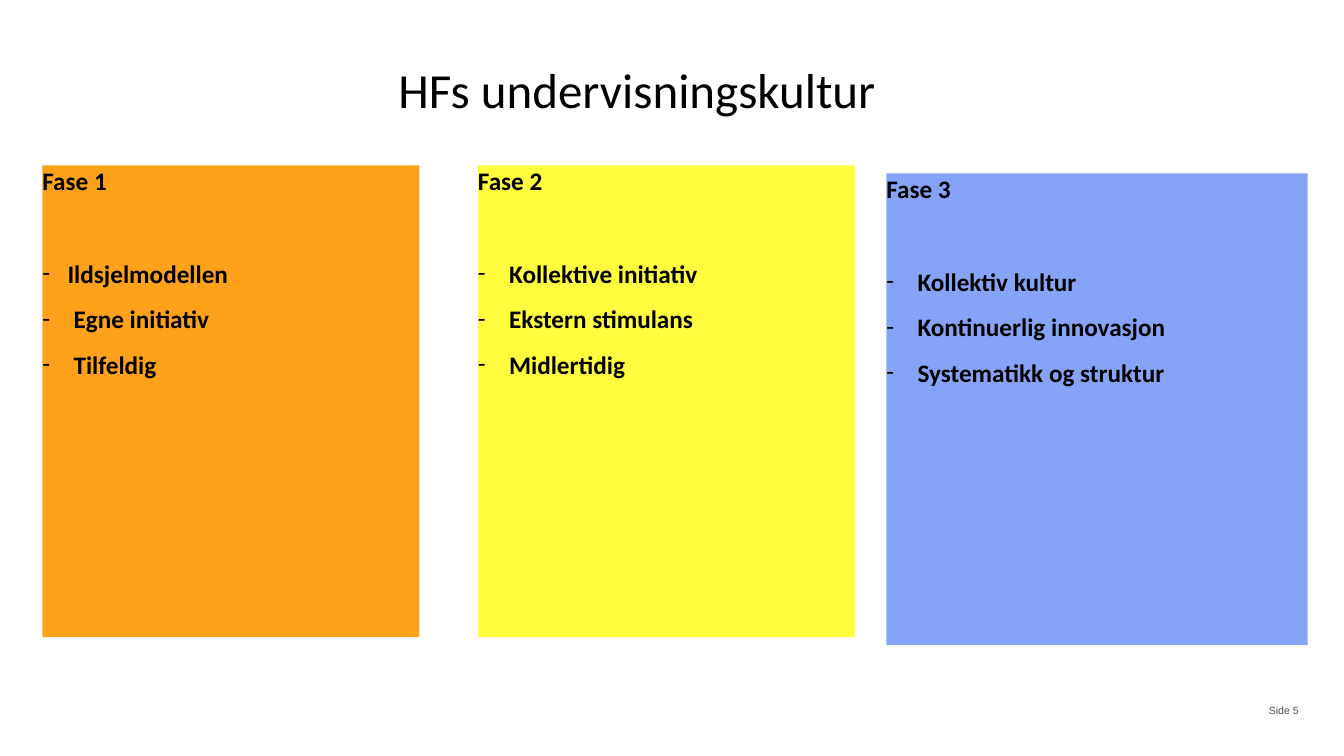
from lxml import etree
from pptx import Presentation
from pptx.dml.color import RGBColor
from pptx.enum.shapes import MSO_SHAPE
from pptx.enum.text import MSO_ANCHOR, MSO_AUTO_SIZE, PP_ALIGN
from pptx.oxml.ns import qn
from pptx.util import Inches, Pt

RECTANGLE = MSO_SHAPE.RECTANGLE
TOP, MIDDLE, BOTTOM = MSO_ANCHOR.TOP, MSO_ANCHOR.MIDDLE, MSO_ANCHOR.BOTTOM
LEFT, CENTER, RIGHT = PP_ALIGN.LEFT, PP_ALIGN.CENTER, PP_ALIGN.RIGHT
NO_FIT = MSO_AUTO_SIZE.NONE
TITLE_ONLY = 5

NO_MARGINS = dict.fromkeys(
    ("margin_left", "margin_top", "margin_right", "margin_bottom"), 0)
TITLE_FONT = {"name": "Calibri", "size": Pt(35), "bold": False}
PANEL_FONT = {"name": "Calibri", "size": Pt(18), "bold": True}
NUMBER_FONT = {"name": "Arial", "size": Pt(7.5), "bold": False}

PANEL_HEIGHT = 4.68
PHASES = [
    (0.42, 1.64, 3.74, "FEA11B", "Fase 1",
     [("Ildsjelmodellen", 0.25), ("Egne initiativ", 0.31), ("Tilfeldig", 0.31)]),
    (4.74, 1.64, 3.74, "FFFD3E", "Fase 2",
     [("Kollektive initiativ", 0.31), ("Ekstern stimulans", 0.31),
      ("Midlertidig", 0.31)]),
    (8.79, 1.72, 4.18, "86A4F7", "Fase 3",
     [("Kollektiv kultur", 0.31), ("Kontinuerlig innovasjon", 0.31),
      ("Systematikk og struktur", 0.31)]),
]


def color(value):
    """Turn a hex string into a colour."""
    return RGBColor.from_string(value)


def set_format(target, values):
    """Set every attribute in a dict of format values."""
    for name, value in values.items():
        setattr(target, name, value)


def write(paragraph, text, font, text_color, **layout):
    """Fill a paragraph with formatted text."""
    paragraph.text = text
    set_format(paragraph, layout)
    set_format(paragraph.font, font)
    paragraph.font.color.rgb = color(text_color)


def add_dash(paragraph, indent):
    """Give a paragraph a hanging dash bullet."""
    properties = paragraph._p.get_or_add_pPr()
    properties.set("marL", str(Inches(indent)))
    properties.set("indent", str(-Inches(indent)))
    etree.SubElement(properties, qn("a:buFont")).set("typeface", "Calibri")
    etree.SubElement(properties, qn("a:buChar")).set("char", "-")


def add_title(slide, text):
    """Place the slide title."""
    title = slide.shapes.title
    set_format(title, {"left": Inches(0.33), "top": Inches(0.11),
                       "width": Inches(11.98), "height": Inches(1.07)})
    set_format(title.text_frame, {**NO_MARGINS, "word_wrap": True,
                                  "auto_size": NO_FIT,
                                  "vertical_anchor": BOTTOM})
    write(title.text_frame.paragraphs[0], text, TITLE_FONT, "000000",
          alignment=CENTER, line_spacing=0.9)


def add_phase(slide, left, top, width, fill, heading, points):
    """Add a coloured panel with a heading and dashed points."""
    panel = slide.shapes.add_shape(RECTANGLE, Inches(left), Inches(top),
                                   Inches(width), Inches(PANEL_HEIGHT))
    panel.shadow.inherit = False
    panel.fill.solid()
    panel.fill.fore_color.rgb = color(fill)
    panel.line.fill.background()
    frame = panel.text_frame
    set_format(frame, {**NO_MARGINS, "word_wrap": True, "vertical_anchor": TOP})
    write(frame.paragraphs[0], heading, PANEL_FONT, "000000", alignment=LEFT)
    for index, (text, indent) in enumerate(points):
        paragraph = frame.add_paragraph()
        add_dash(paragraph, indent)
        write(paragraph, text, PANEL_FONT, "000000", alignment=LEFT,
              space_before=Pt(11 if index else 44.5))


def add_slide_number(slide, text):
    """Add the page label in the lower right corner."""
    box = slide.shapes.add_textbox(Inches(12.32), Inches(6.85),
                                   Inches(0.66), Inches(0.4))
    set_format(box.text_frame, {"word_wrap": True, "vertical_anchor": MIDDLE})
    write(box.text_frame.paragraphs[0], text, NUMBER_FONT, "524B48",
          alignment=RIGHT)


def main():
    """Build and save the slide."""
    presentation = Presentation()
    presentation.slide_width = Inches(13.33)
    presentation.slide_height = Inches(7.5)
    slide = presentation.slides.add_slide(presentation.slide_layouts[TITLE_ONLY])
    add_title(slide, "HFs undervisningskultur")
    for phase in PHASES:
        add_phase(slide, *phase)
    add_slide_number(slide, "Side 5")
    presentation.save("out.pptx")


if __name__ == "__main__":
    main()
